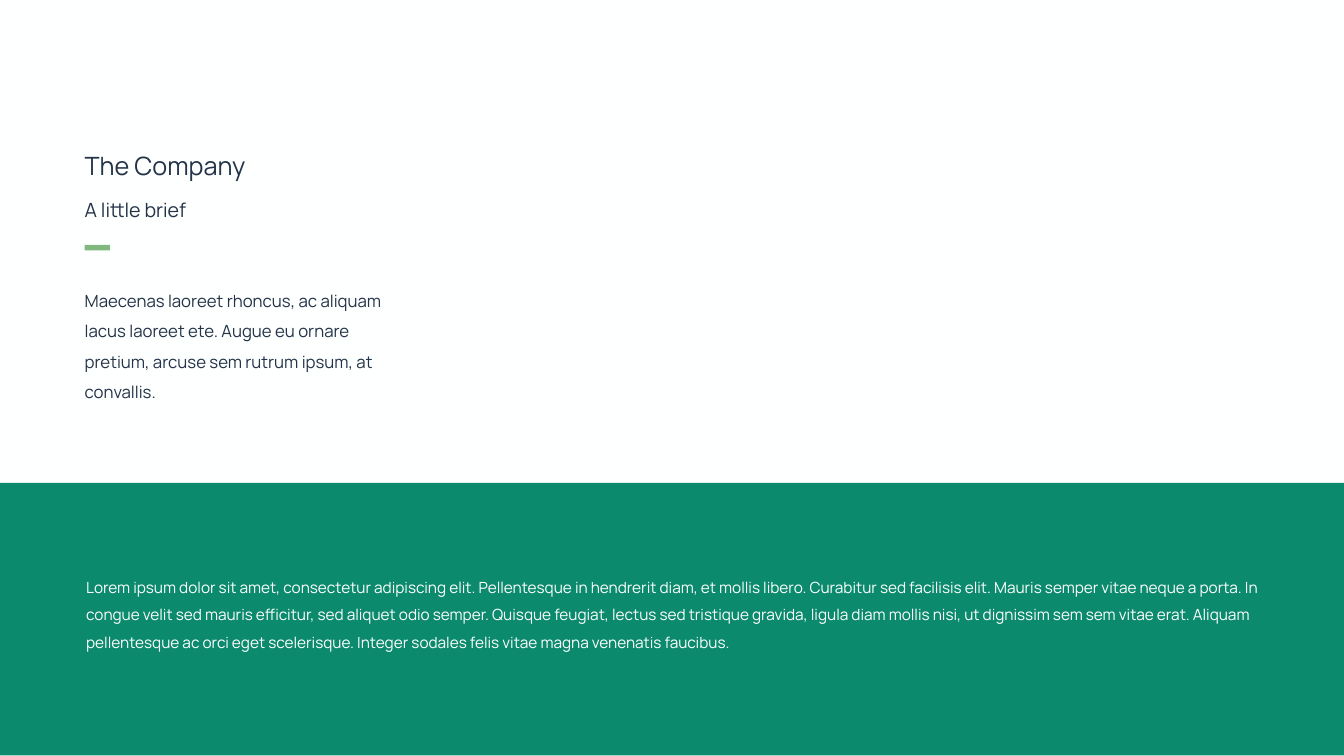
from dataclasses import dataclass

from pptx import Presentation
from pptx import util as u
from pptx.dml.color import RGBColor
from pptx.enum import shapes, text


@dataclass(frozen=True)
class Theme:
    font: str = "Manrope"
    paper: str = "FEFFFF"
    ink: str = "233348"
    accent: str = "80B880"
    band: str = "0B8A6D"
    title: int = 36
    subtitle: int = 28
    body: int = 24
    note: int = 22


class Builder:
    def __init__(self, s, theme):
        self.s, self.theme = s, theme
        s.background.fill.solid()
        s.background.fill.fore_color.rgb = RGBColor.from_string(theme.paper)

    def set_text(self, sp, box, words, size, color, spacing):
        for name, value in zip(("left", "top", "width", "height"), box):
            setattr(sp, name, u.Inches(value))
        tf = sp.text_frame
        frame_format = {
            "margin_left": 0, "margin_top": 0, "margin_right": 0, "margin_bottom": 0,
            "word_wrap": True, "auto_size": text.MSO_AUTO_SIZE.NONE,
            "vertical_anchor": text.MSO_ANCHOR.TOP,
        }
        for name, value in frame_format.items():
            setattr(tf, name, value)
        p = tf.paragraphs[0]
        p.alignment = text.PP_ALIGN.LEFT
        p.line_spacing = spacing
        p.space_before = u.Pt(0)
        r = p.add_run()
        r.text = words
        for name, value in {"name": self.theme.font, "size": u.Pt(size)}.items():
            setattr(r.font, name, value)
        r.font.color.rgb = RGBColor.from_string(color)

    def title(self, box, words, size, color):
        self.set_text(self.s.shapes.title, box, words, size, color, 1.0)

    def text(self, box, words, size, color, spacing=1.0):
        sp = self.s.shapes.add_textbox(*map(u.Inches, box))
        self.set_text(sp, box, words, size, color, spacing)

    def rect(self, box, color):
        sp = self.s.shapes.add_shape(shapes.MSO_SHAPE.RECTANGLE, *map(u.Inches, box))
        sp.shadow.inherit = False
        sp.fill.solid()
        sp.fill.fore_color.rgb = RGBColor.from_string(color)
        sp.line.fill.background()


def main():
    width, height = 26.67, 15
    left, column = 1.68, 5.91
    prs = Presentation()
    prs.slide_width, prs.slide_height = u.Inches(width), u.Inches(height)
    theme = Theme()
    b = Builder(prs.slides.add_slide(prs.slide_layouts[5]), theme)

    # Heading with accent bar
    b.title((left, 2.98, column, 0.61), "The Company", theme.title, theme.ink)
    b.text((left, 3.93, column, 0.47), "A little brief", theme.subtitle, theme.ink)
    b.rect((left, 4.86, 0.5, 0.11), theme.accent)

    # Introduction
    b.text((left, 5.57, column, 2.49),
           "Maecenas laoreet rhoncus, ac aliquam lacus laoreet ete. Augue eu ornare "
           "pretium, arcuse sem rutrum ipsum, at convallis.",
           theme.body, theme.ink, 1.5)

    # Bottom band with the longer description
    b.rect((0, 9.58, width, 5.41), theme.band)
    b.text((1.71, 11.28, 23.28, 1.67),
           "Lorem ipsum dolor sit amet, consectetur adipiscing elit. Pellentesque in "
           "hendrerit diam, et mollis libero. Curabitur sed facilisis elit. Mauris semper "
           "vitae neque a porta. In congue velit sed mauris efficitur, sed aliquet odio "
           "semper. Quisque feugiat, lectus sed tristique gravida, ligula diam mollis nisi, "
           "ut dignissim sem sem vitae erat. Aliquam pellentesque ac orci eget scelerisque. "
           "Integer sodales felis vitae magna venenatis faucibus.",
           theme.note, theme.paper, 1.5)

    prs.save("out.pptx")


if __name__ == "__main__":
    main()
